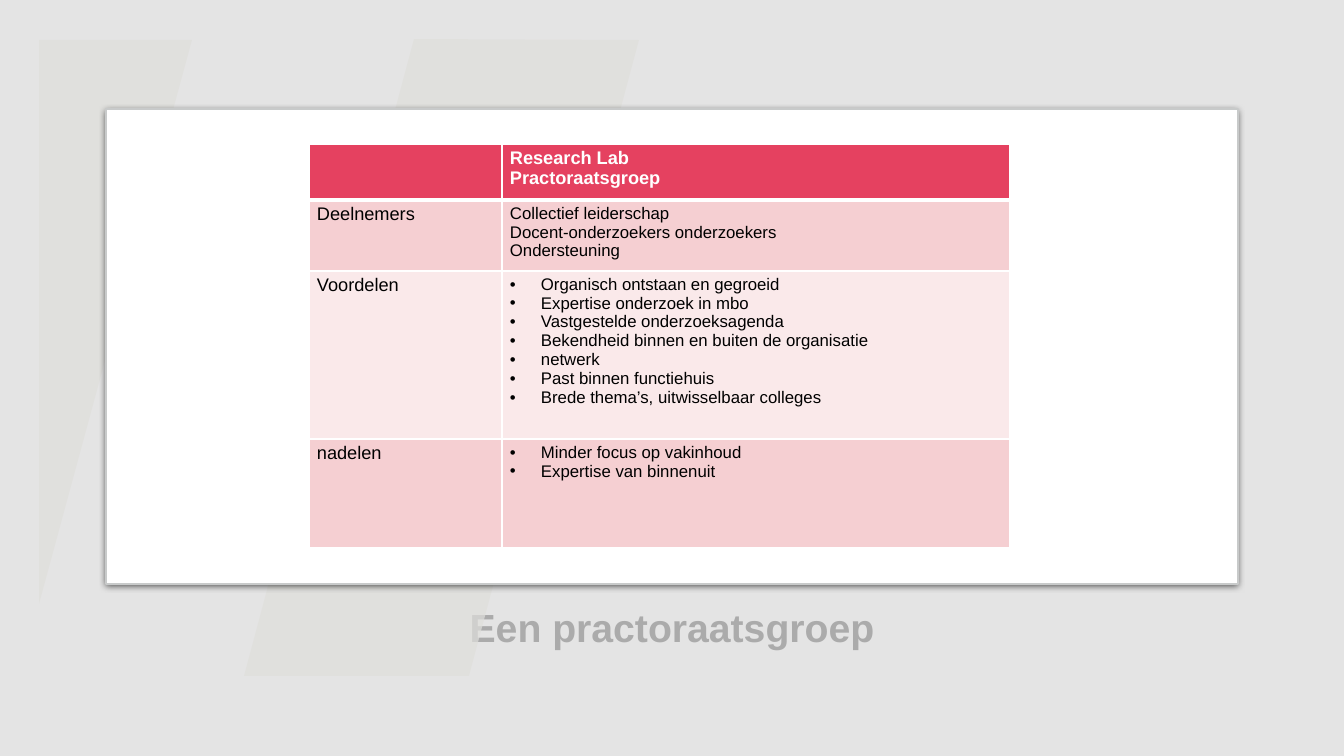
from pptx import Presentation
from pptx.dml.color import RGBColor
from pptx.enum.shapes import MSO_SHAPE as Geo
from pptx.enum.text import MSO_ANCHOR as Anchor, PP_ALIGN as Align
from pptx.oxml import parse_xml
from pptx.oxml.ns import nsdecls
from pptx.util import Pt

SCALE = 914400 / 100.8  # EMU in one px
FONT = "Arial"
NS = nsdecls("a")


def px(n):
    return round(n * SCALE)


def rgb(code):
    return RGBColor.from_string(code)


class Page:
    def __init__(self, deck):
        self.slide = deck.slides.add_slide(deck.slide_layouts[5])
        self.shapes = self.slide.shapes

    def style(self, para, size, color, bold=False):
        font = para.font
        font.name, font.size, font.bold = FONT, Pt(size), bold
        font.color.rgb = rgb(color)

    def paint(self, shape, color, alpha=None):
        shape.shadow.inherit = False
        shape.line.fill.background()
        shape.fill.solid()
        shape.fill.fore_color.rgb = rgb(color)
        if alpha:
            tint = shape.fill._xPr.find(".//" + "{*}srgbClr")
            tint.append(parse_xml(f'<a:alpha {NS} val="{alpha * 1000}"/>'))

    def band(self, start, *points):
        build = self.shapes.build_freeform(*start, scale=SCALE)
        build.add_line_segments(points, close=True)
        self.paint(build.convert_to_shape(), "EEECE1", 70)

    def box(self, kind, area, color, alpha=None):
        shape = self.shapes.add_shape(kind, *map(px, area))
        self.paint(shape, color, alpha)
        return shape

    def card(self, area):
        shape = self.box(Geo.ROUNDED_RECTANGLE, area, "FFFFFF")
        shape.adjustments[0] = 0
        shape.line.color.rgb = rgb("C8CACA")
        shape.line.width = Pt(0.75)
        glow = shape._element.spPr.find("{*}effectLst")
        glow.append(parse_xml(
            f'<a:outerShdw {NS} blurRad="{Pt(4.5)}" dist="{Pt(1.5)}" dir="5400000" '
            'algn="t" rotWithShape="0"><a:srgbClr val="000000">'
            '<a:alpha val="63000"/></a:srgbClr></a:outerShdw>'))

    def title(self, text, area):
        shape = self.shapes.title
        shape.left, shape.top, shape.width, shape.height = map(px, area)
        frame = shape.text_frame
        frame.text = text
        frame.word_wrap = True
        frame.vertical_anchor = Anchor.TOP
        frame.margin_top = px(11)
        para = frame.paragraphs[0]
        para.alignment = Align.CENTER
        para.line_spacing = 0.9
        self.style(para, 28, "404040", True)

    def edge(self, cell, base):
        props = cell._tc.get_or_add_tcPr()
        for side in "LRTB":
            width = Pt(base if side == "B" else 1)
            props.append(parse_xml(
                f'<a:ln{side} {NS} w="{width}"><a:solidFill>'
                f'<a:srgbClr val="FFFFFF"/></a:solidFill></a:ln{side}>'))

    def cell(self, cell, lines, fill, size, head, dots):
        self.edge(cell, 3 if head else 1)
        cell.fill.solid()
        cell.fill.fore_color.rgb = rgb(fill)
        cell.margin_left = cell.margin_right = px(8)
        cell.margin_top = cell.margin_bottom = px(4)
        cell.text = "\n".join(lines)
        for para in cell.text_frame.paragraphs:
            if dots:
                props = para._p.get_or_add_pPr()
                props.set("marL", str(px(31)))
                props.set("indent", str(-px(31)))
                props.append(parse_xml(f'<a:buFont {NS} typeface="{FONT}"/>'))
                props.append(parse_xml(f'<a:buChar {NS} char="•"/>'))
            self.style(para, size, "FFFFFF" if head else "000000", head)

    def table(self, left, top, cols, rows):
        area = left, top, sum(cols), sum(row[0] for row in rows)
        grid = self.shapes.add_table(len(rows), len(cols), *map(px, area)).table
        grid.horz_banding = False
        for col, width in zip(grid.columns, cols):
            col.width = px(width)
        for i, (height, fill, label, lines, dots) in enumerate(rows):
            grid.rows[i].height = px(height)
            head = i == 0
            self.cell(grid.cell(i, 0), [label], fill, 13, head, False)
            self.cell(grid.cell(i, 1), lines, fill, 13 if head else 12, head, dots)


# Height, fill, label, lines, bulleted
ROWS = [
    (56, "E54160", "", ["Research Lab", "Practoraatsgroep"], False),
    (71, "F5CFD2", "Deelnemers", [
        "Collectief leiderschap",
        "Docent-onderzoekers onderzoekers",
        "Ondersteuning"], False),
    (168, "FAE9EA", "Voordelen", [
        "Organisch ontstaan en gegroeid",
        "Expertise onderzoek in mbo",
        "Vastgestelde onderzoeksagenda",
        "Bekendheid binnen en buiten de organisatie",
        "netwerk",
        "Past binnen functiehuis",
        "Brede thema’s, uitwisselbaar colleges"], True),
    (109, "F5CFD2", "nadelen", [
        "Minder focus op vakinhoud",
        "Expertise van binnenuit"], True),
]


def main():
    deck = Presentation()
    deck.slide_width, deck.slide_height = px(1344), px(756)
    page = Page(deck)

    # Backdrop
    page.band((39, 604), (39, 40), (192, 40))
    page.band((244, 676), (414, 39), (639, 40), (469, 676))
    page.box(Geo.RECTANGLE, (0, -1, 1344, 757), "D9D9D9", 70)

    # Title, card and table
    page.title("Een practoraatsgroep", (106, 598, 1132, 103))
    page.card((106, 109, 1132, 475))
    page.table(309, 144, (193, 508), ROWS)

    deck.save("out.pptx")


if __name__ == "__main__":
    main()
